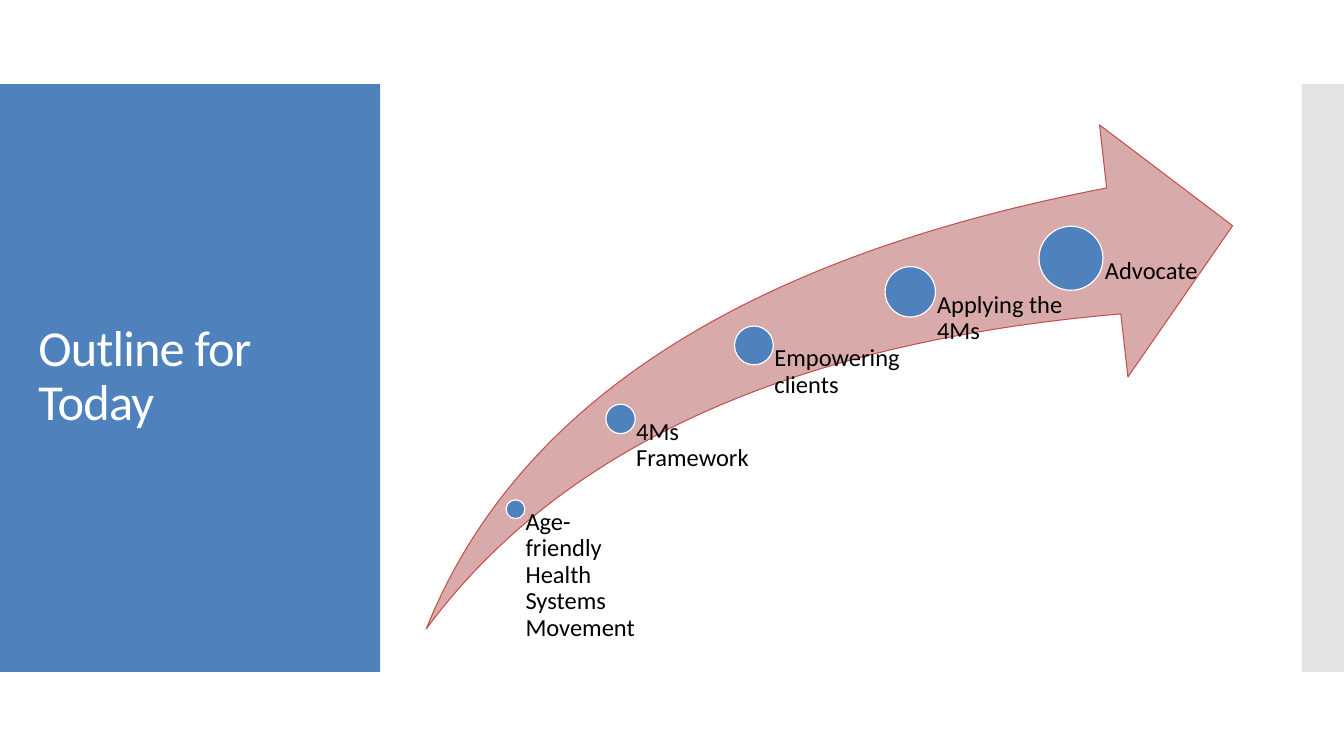
from pptx import Presentation
from pptx.dml.color import RGBColor
from pptx.enum.shapes import MSO_SHAPE as SHAPE
from pptx.enum.text import MSO_ANCHOR as ANCHOR, MSO_AUTO_SIZE as AUTO, PP_ALIGN as ALIGN
from pptx.oxml.ns import qn
from pptx.util import Pt
from lxml.etree import SubElement

PX = 9525
FONT = "Calibri"
BLUE, RED, PINK = "4F81BD", "C0504D", "D9AAAA"
GREY, WHITE, BLACK = "C8C8C8", "FFFFFF", "000000"

STEPS = [
    ("Age-friendly Health Systems Movement", 85, 366, 18, 117),
    ("4Ms Framework", 185, 280, 28, 128),
    ("Empowering clients", 312, 210, 37, 148),
    ("Applying the 4Ms", 461, 159, 48, 154),
    ("Advocate", 614, 127, 61, 154),
]


def px(*lengths):
    return [round(length * PX) for length in lengths]


def rgb(color):
    return RGBColor.from_string(color)


def add_shape(slide, kind, box, fill, line=None, width=0):
    sp = slide.shapes.add_shape(kind, *px(*box))
    sp.shadow.inherit = False
    sp.fill.solid()
    sp.fill.fore_color.rgb = rgb(fill)
    if line:
        sp.line.color.rgb = rgb(line)
        sp.line.width = Pt(width)
    else:
        sp.line.fill.background()
    return sp


def add_run(tf, text, size, color):
    p = tf.paragraphs[0]
    p.alignment = ALIGN.LEFT
    p.line_spacing = 0.9
    r = p.add_run()
    r.text = text
    r.font.name = FONT
    r.font.size = Pt(size)
    r.font.color.rgb = rgb(color)
    return r


def add_title_panel(slide, box, text):
    x, y, w, h = box
    add_shape(slide, SHAPE.RECTANGLE, box, BLUE)
    title = slide.shapes.title
    title.left, title.top, title.width, title.height = px(x + 27, y + 38, w - 53, h - 77)
    tf = title.text_frame
    tf.word_wrap = True
    tf.auto_size = AUTO.NONE
    tf.vertical_anchor = ANCHOR.MIDDLE
    r = add_run(tf, text, 36, WHITE)
    r.font._element.set("spc", "-60")
    title.element.getparent().append(title.element)


def add_side_bar(slide, box):
    sp = add_shape(slide, SHAPE.RECTANGLE, box, GREY)
    color = sp.element.spPr.find(qn("a:solidFill"))[0]
    SubElement(color, qn("a:alpha")).set("val", "50000")


def add_step(slide, box, diameter, text):
    x, y, w, h = box
    dot = (x - diameter / 2, y - diameter / 2, diameter, diameter)
    add_shape(slide, SHAPE.OVAL, dot, BLUE, WHITE, 0.85)
    tf = slide.shapes.add_textbox(*px(*box)).text_frame
    tf.word_wrap = True
    tf.margin_left = px(diameter * 0.53)[0]
    tf.margin_top = tf.margin_right = tf.margin_bottom = 0
    add_run(tf, text, 17.5, BLACK)


def add_arrow_process(slide, box, steps):
    left, top, w, h = box
    arrow = add_shape(slide, SHAPE.SWOOSH_ARROW, box, PINK, RED, 0.75)
    arrow.adjustments[0] = arrow.adjustments[1] = 0.25
    for text, x, y, diameter, width in steps:
        add_step(slide, (left + x, top + y, width, h - y), diameter, text)


def main():
    prs = Presentation()
    prs.slide_width, prs.slide_height = px(1280, 720)
    slide = prs.slides.add_slide(prs.slide_layouts[5])
    add_title_panel(slide, (0, 80, 362, 560), "Outline for Today")
    add_side_bar(slide, (1240, 80, 40, 560))
    add_arrow_process(slide, (406, 119, 768, 480), STEPS)
    prs.save("out.pptx")


if __name__ == "__main__":
    main()
